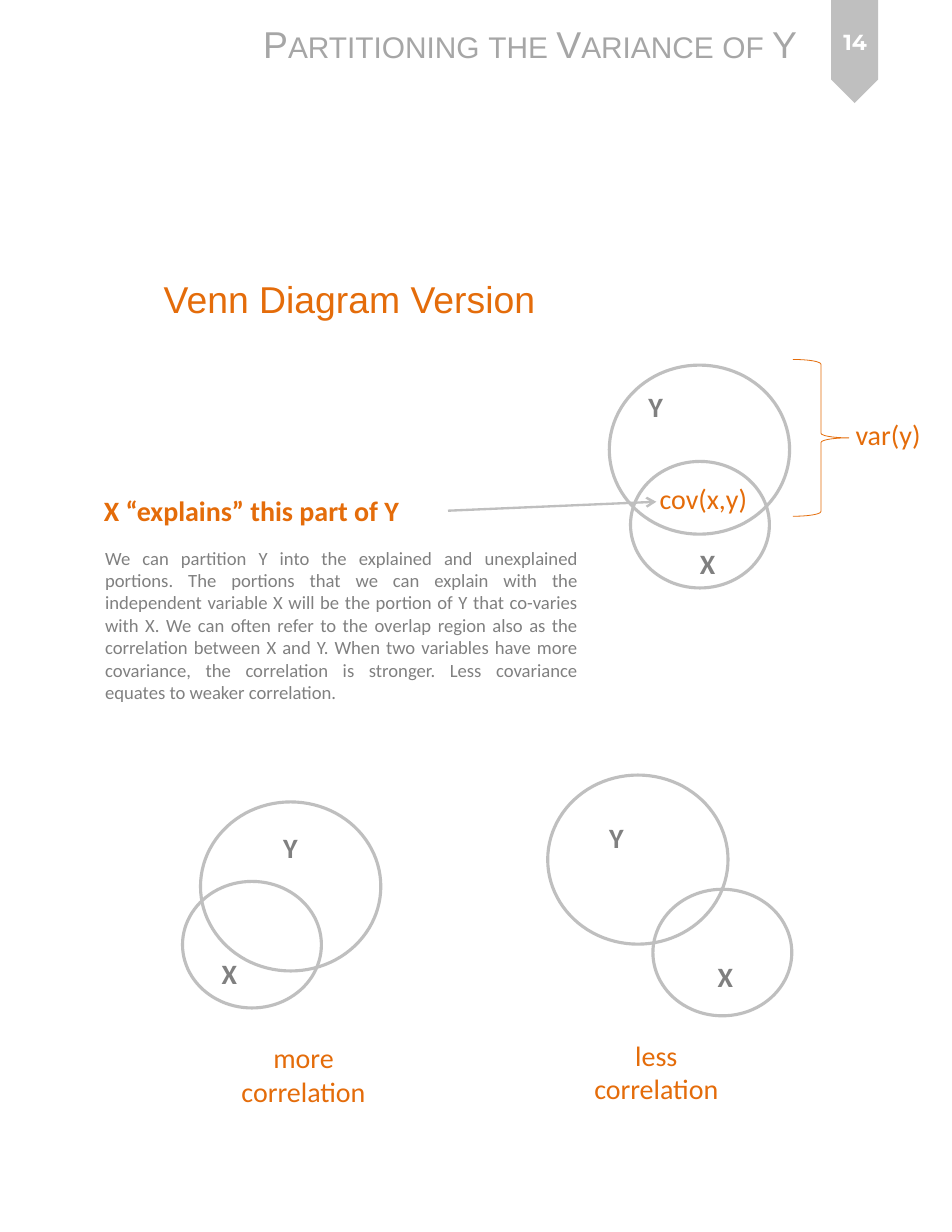
from lxml.etree import SubElement
from pptx import Presentation
from pptx.dml.color import RGBColor
from pptx.enum.shapes import MSO_CONNECTOR as Connector, MSO_SHAPE as Shape
from pptx.enum.text import MSO_ANCHOR as Anchor, MSO_AUTO_SIZE as AutoSize, PP_ALIGN as Align
from pptx.oxml.ns import qn
from pptx.util import Inches, Pt


def color(hex_code):
    return RGBColor.from_string(hex_code)


def write(frame, text, size=18, font="Calibri", fill="E46C0A", bold=False, align=Align.LEFT,
          anchor=Anchor.TOP, wrap=True, grow=True, small_caps=False):
    frame.word_wrap = wrap
    frame.auto_size = AutoSize.SHAPE_TO_FIT_TEXT if grow else AutoSize.NONE
    frame.vertical_anchor = anchor
    paragraph = frame.paragraphs[0]
    paragraph.text = text
    paragraph.alignment = align
    for run in paragraph.runs:
        run.font.size = Pt(size)
        run.font.name = font
        run.font.bold = bold
        run.font.color.rgb = color(fill)
        if small_caps:
            run._r.get_or_add_rPr().set("cap", "small")


class Page:
    gray = "BFBFBF"
    label_gray = "808080"
    orange = "E46C0A"

    def __init__(self, deck):
        self.slide = deck.slides.add_slide(deck.slide_layouts[5])
        self.shapes = self.slide.shapes

    def title(self, text, left, top, width, height, **style):
        heading = self.shapes.title
        heading.left, heading.top = Inches(left), Inches(top)
        heading.width, heading.height = Inches(width), Inches(height)
        write(heading.text_frame, text, **style)

    def text(self, text, left, top, width, height, **style):
        box = self.shapes.add_textbox(Inches(left), Inches(top), Inches(width), Inches(height))
        write(box.text_frame, text, **style)

    def shape(self, kind, left, top, width, height, fill=None, line=None, weight=2, rotation=0):
        item = self.shapes.add_shape(kind, Inches(left), Inches(top), Inches(width), Inches(height))
        item.shadow.inherit = False
        item.rotation = rotation
        if fill:
            item.fill.solid()
            item.fill.fore_color.rgb = color(fill)
        else:
            item.fill.background()
        if line:
            item.line.color.rgb = color(line)
            item.line.width = Pt(weight)
        else:
            item.line.fill.background()

    def arrow(self, x1, y1, x2, y2):
        pointer = self.shapes.add_connector(
            Connector.STRAIGHT, Inches(x1), Inches(y1), Inches(x2), Inches(y2))
        pointer.line.color.rgb = color(self.gray)
        pointer.line.width = Pt(1.5)
        SubElement(pointer.line._get_or_add_ln(), qn("a:tailEnd"), type="arrow")
        SubElement(pointer._element.spPr, qn("a:effectLst"))

    def venn(self, y_circle, x_circle, y_label, x_label):
        self.shape(Shape.OVAL, *x_circle, 1.24, 1.13, line=self.gray)
        self.shape(Shape.OVAL, *y_circle, 1.61, 1.51, line=self.gray)
        self.text("X", *x_label, 1.1, 0.4, fill=self.label_gray, bold=True)
        self.text("Y", *y_label, 0.33, 0.4, fill=self.label_gray, bold=True)


def main():
    deck = Presentation()
    deck.slide_width, deck.slide_height = Inches(8.5), Inches(11)
    page = Page(deck)

    page.shape(Shape.PENTAGON, 7.17, 0.25, 0.92, 0.42, fill=page.gray, rotation=90)
    page.title("Partitioning the Variance of Y", 2.25, 0.14, 5.02, 0.5, size=24, font="Arial",
               fill="A6A6A6", wrap=False, small_caps=True)
    page.text("14", 7.26, 0.08, 0.75, 0.59, size=14, font="Montserrat", fill="FFFFFF", bold=True,
              align=Align.CENTER, anchor=Anchor.MIDDLE, grow=False)
    page.text("Venn Diagram Version", 0.42, 2.42, 5.4, 0.62, size=24, font="Arial",
              align=Align.CENTER, grow=False)

    page.venn((5.44, 3.26), (5.63, 4.12), (5.69, 3.43), (6.15, 4.83))
    page.text("cov(x,y)", 5.79, 4.25, 0.99, 0.4, wrap=False)
    page.arrow(4, 4.56, 5.86, 4.48)
    page.shape(Shape.RIGHT_BRACE, 7.08, 3.21, 0.5, 1.4, line=page.orange, weight=0.5)
    page.text("var(y)", 7.54, 3.68, 0.79, 0.4, wrap=False)

    page.text("X “explains” this part of Y", 0.83, 4.36, 2.92, 0.4, bold=True)
    page.text(
        "We can partition Y into the explained and unexplained portions. The portions that we can "
        "explain with the independent variable X will be the portion of Y that co-varies with X. "
        "We can often refer to the overlap region also as the correlation between X and Y. When "
        "two variables have more covariance, the correlation is stronger. Less covariance equates "
        "to weaker correlation.",
        0.84, 4.83, 4.42, 1.51, size=12, fill=page.label_gray, align=Align.JUSTIFY)

    page.venn((1.79, 7.16), (1.63, 7.87), (2.43, 7.37), (1.88, 8.49))
    page.venn((4.89, 6.92), (5.83, 7.94), (5.34, 7.28), (6.31, 8.52))
    for caption, left, top in (("more\vcorrelation", 2.05, 9.24), ("less\vcorrelation", 5.2, 9.22)):
        page.text(caption, left, top, 1.32, 0.71, align=Align.CENTER, wrap=False)

    deck.save("out.pptx")


if __name__ == "__main__":
    main()
